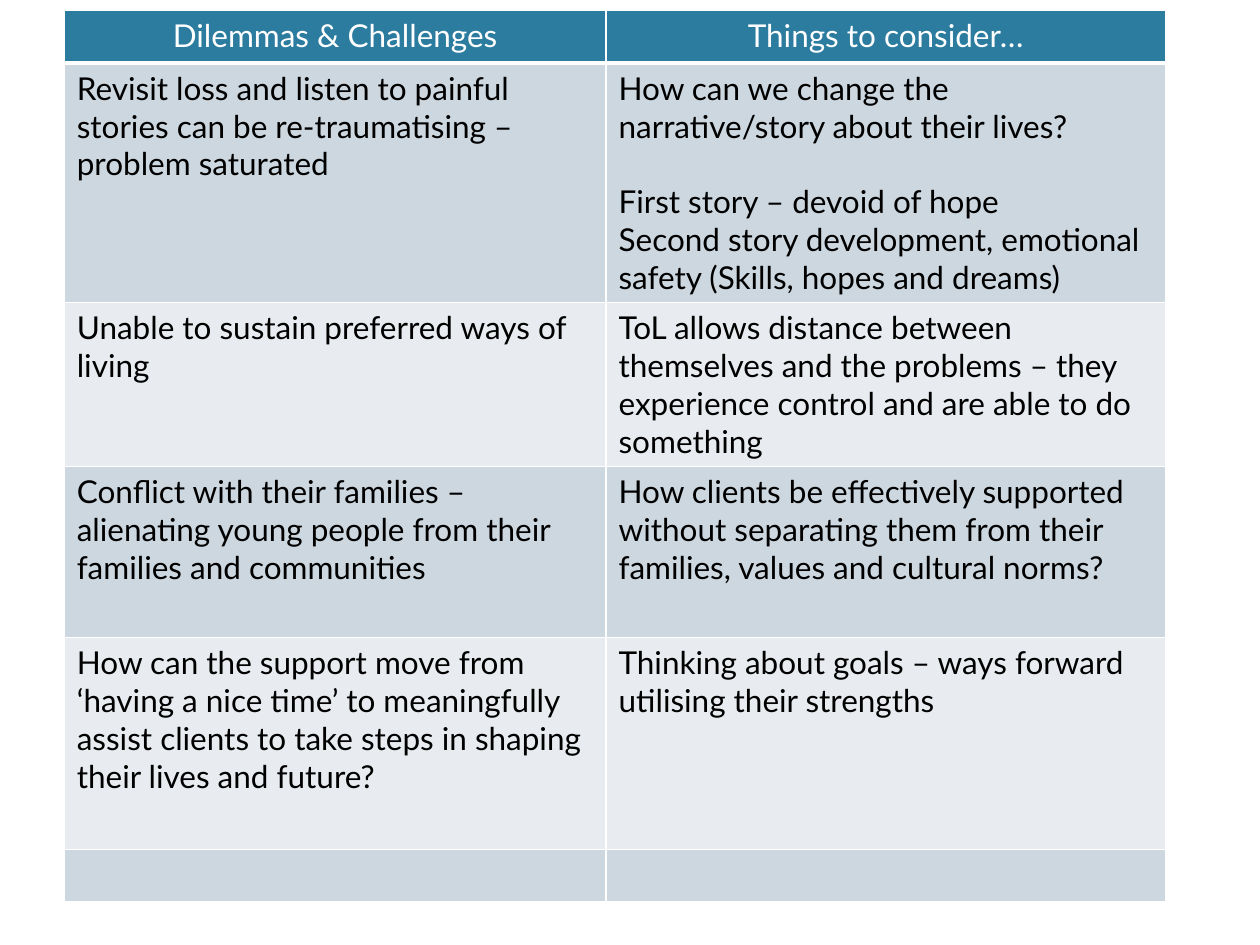
from dataclasses import dataclass

from lxml import etree
from pptx import Presentation
from pptx import util as u
from pptx.dml.color import RGBColor
from pptx.enum import text
from pptx.oxml.ns import qn


@dataclass(frozen=True)
class Theme:
    font: str = "Lato"
    size: float = 18
    gap: float = 21.6  # one line of body text
    head: str = "2C7C9F"
    bands: tuple = ("CDD7DF", "E8ECF0")
    light: str = "FFFFFF"
    dark: str = "000000"
    thin: float = 1
    thick: float = 3


THEME = Theme()
COLS = (4.3, 4.44)
HEIGHTS = (0.42, 1.74, 1.19, 1.36, 1.68, 0.42)
GAP = "First story – devoid of hope"  # set apart from the question above it

# Each cell is a list of paragraphs
ROWS = [
    (["Dilemmas & Challenges"], ["Things to consider…"]),
    (["Revisit loss and listen to painful stories can be re-traumatising – problem saturated"],
     ["How can we change the narrative/story about their lives?",
      GAP,
      "Second story development, emotional safety (Skills, hopes and dreams)"]),
    (["Unable to sustain preferred ways of living"],
     ["ToL allows distance between themselves and the problems – they experience control "
      "and are able to do something"]),
    (["Conflict with their families – alienating young people from their families and communities"],
     ["How clients be effectively supported without separating them from their families, "
      "values and cultural norms?"]),
    (["How can the support move from ‘having a nice time’ to meaningfully assist clients "
      "to take steps in shaping their lives and future?"],
     ["Thinking about goals – ways forward utilising their strengths"]),
    ([], []),
]


def add_edges(cell, base):
    """Draw the four cell borders; the bottom one has its own width."""
    props = cell._tc.get_or_add_tcPr()
    for i, side in enumerate(("lnL", "lnR", "lnT", "lnB")):
        width = base if side == "lnB" else THEME.thin
        line = etree.Element(qn(f"a:{side}"), w=str(u.Pt(width)))
        fill = etree.SubElement(line, qn("a:solidFill"))
        etree.SubElement(fill, qn("a:srgbClr"), val=THEME.light)
        props.insert(i, line)


def fill_cell(cell, paras, row):
    head = row == 0
    color = THEME.head if head else THEME.bands[(row - 1) % 2]
    cell.fill.solid()
    cell.fill.fore_color.rgb = RGBColor.from_string(color)
    add_edges(cell, THEME.thick if head else THEME.thin)

    cell.text_frame.text = "\n".join(paras)
    for para in cell.text_frame.paragraphs:
        if head:
            para.alignment = text.PP_ALIGN.CENTER
        if para.text == GAP:
            para.space_before = u.Pt(THEME.gap)
        for run in para.runs:
            run.font.name = THEME.font
            run.font.size = u.Pt(THEME.size)
            run.font.bold = False
            run.font.color.rgb = RGBColor.from_string(THEME.light if head else THEME.dark)


def add_grid(slide, left, top, width, height):
    """Place the two-column table in the given box."""
    grid = slide.shapes.add_table(len(ROWS), len(COLS), left, top, width, height).table
    for col, size in zip(grid.columns, COLS):
        col.width = u.Inches(size)
    for row, size in zip(grid.rows, HEIGHTS):
        row.height = u.Inches(size)
    for r, row in enumerate(ROWS):
        for c, paras in enumerate(row):
            fill_cell(grid.cell(r, c), paras, r)


def main():
    deck = Presentation()
    deck.slide_width, deck.slide_height = u.Inches(10), u.Inches(7.5)
    slide = deck.slides.add_slide(deck.slide_layouts[6])
    add_grid(slide, u.Inches(0.51), u.Inches(0.08), u.Inches(sum(COLS)), u.Inches(sum(HEIGHTS)))
    deck.save("out.pptx")


if __name__ == "__main__":
    main()
